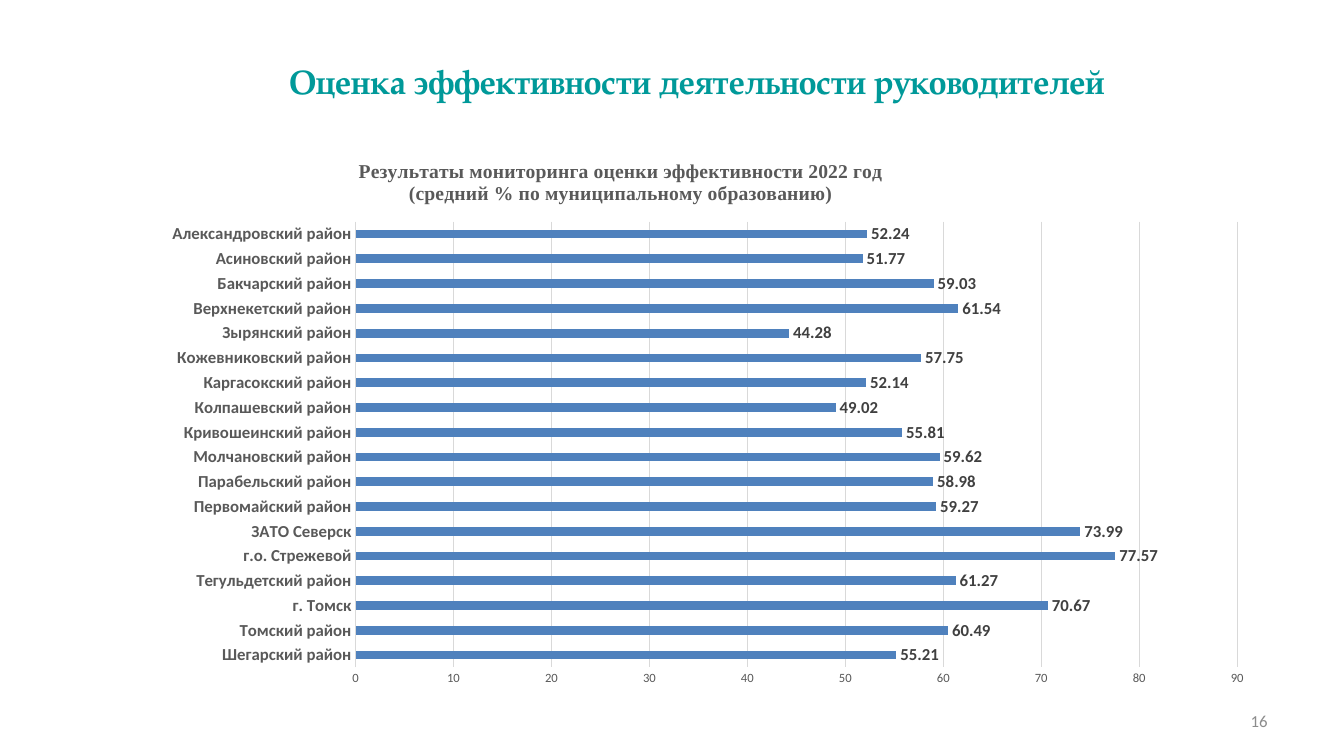
from pptx import Presentation
from pptx.chart.data import CategoryChartData
from pptx.dml.color import RGBColor
from pptx.enum.chart import XL_CHART_TYPE, XL_LABEL_POSITION, XL_TICK_MARK
from pptx.enum.text import MSO_ANCHOR, PP_ALIGN
from pptx.oxml import parse_xml
from pptx.oxml.ns import nsdecls, qn
from pptx.util import Inches, Pt

TEAL = RGBColor(0x00, 0x99, 0x99)
BLUE = RGBColor(0x4F, 0x81, 0xBD)
BLACK = RGBColor(0x00, 0x00, 0x00)
DARK = RGBColor(0x40, 0x40, 0x40)
GRAY = RGBColor(0x59, 0x59, 0x59)
PALE = RGBColor(0xD9, 0xD9, 0xD9)
SOFT = RGBColor(0x8C, 0x8C, 0x8C)

HEAD = "Оценка эффективности деятельности руководителей"
CAPTION = ("Результаты мониторинга оценки эффективности 2022 год",
           "(средний % по муниципальному образованию)")
SCORES = {
    "Шегарский район": 55.21,
    "Томский район": 60.49,
    "г. Томск": 70.67,
    "Тегульдетский район": 61.27,
    "г.о. Стрежевой": 77.57,
    "ЗАТО Северск": 73.99,
    "Первомайский район": 59.27,
    "Парабельский район": 58.98,
    "Молчановский район": 59.62,
    "Кривошеинский район": 55.81,
    "Колпашевский район": 49.02,
    "Каргасокский район": 52.14,
    "Кожевниковский район": 57.75,
    "Зырянский район": 44.28,
    "Верхнекетский район": 61.54,
    "Бакчарский район": 59.03,
    "Асиновский район": 51.77,
    "Александровский район": 52.24,
}


def set_font(font, name, size, color, bold=False):
    font.name = name
    font.size = Pt(size)
    font.color.rgb = color
    font.bold = bold


def add_text(slide, box, text, style, align=PP_ALIGN.LEFT):
    frame = slide.shapes.add_textbox(*map(Inches, box)).text_frame
    frame.word_wrap = True
    frame.vertical_anchor = MSO_ANCHOR.MIDDLE
    frame.text = text
    para = frame.paragraphs[0]
    para.alignment = align
    set_font(para.runs[0].font, *style)


def set_layout(parent, index, target="", **parts):
    """Place a chart part by fractions of the chart's size."""
    for old in parent.findall(qn("c:layout")):
        parent.remove(old)
    modes = "".join(f'<c:{key}Mode val="edge"/>' for key in "xy")
    sizes = "".join(f'<c:{key} val="{val}"/>' for key, val in parts.items())
    parent.insert(index, parse_xml(
        f'<c:layout {nsdecls("c")}><c:manualLayout>{target}{modes}{sizes}'
        '</c:manualLayout></c:layout>'))


def set_title(chart):
    frame = chart.chart_title.text_frame
    frame.text = "\n".join(CAPTION)
    for para in frame.paragraphs:
        para.alignment = PP_ALIGN.CENTER
        set_font(para.runs[0].font, "Times New Roman", 14, GRAY, True)
    chart.chart_title.include_in_layout = False
    set_layout(chart.chart_title._element, 1, x=0.19, y=0.01)


def set_axes(chart):
    names, values = chart.category_axis, chart.value_axis
    for axis in (names, values):
        axis.major_tick_mark = axis.minor_tick_mark = XL_TICK_MARK.NONE
    set_font(names.tick_labels.font, "Calibri", 12, GRAY, True)
    set_font(values.tick_labels.font, "Calibri", 9, GRAY)
    values.minimum_scale, values.maximum_scale = 0, 90
    values.major_unit = 10
    values.tick_labels.number_format = "General"
    values.tick_labels.number_format_is_linked = False
    values.format.line.fill.background()
    values.has_major_gridlines = True
    for line in (names.format.line, values.major_gridlines.format.line):
        line.color.rgb = PALE
        line.width = Pt(0.75)


def set_bars(plot):
    plot.gap_width = 182
    plot.vary_by_categories = False
    fill = plot.series[0].format.fill
    fill.solid()
    fill.fore_color.rgb = BLUE
    labels = plot.series[0].data_labels
    labels.show_value = True
    labels.position = XL_LABEL_POSITION.OUTSIDE_END
    set_font(labels.font, "Calibri", 12, DARK, True)


def add_scores(slide, box):
    data = CategoryChartData()
    data.categories = list(SCORES)
    data.add_series("Series 1", list(SCORES.values()))
    chart = slide.shapes.add_chart(
        XL_CHART_TYPE.BAR_CLUSTERED, *map(Inches, box), data).chart
    set_font(chart.font, "Calibri", 10, BLACK)
    chart.has_legend = False
    set_title(chart)
    set_axes(chart)
    set_bars(chart.plots[0])
    area = chart._chartSpace.chart.plotArea
    set_layout(area, 0, '<c:layoutTarget val="inner"/>',
               x=0.19, y=0.13, w=0.8, h=0.81)


def main():
    deck = Presentation()
    deck.slide_width, deck.slide_height = Inches(13.33), Inches(7.5)
    slide = deck.slides.add_slide(deck.slide_layouts[6])
    add_text(slide, (9.56, 6.95, 3.11, 0.4), "16",
             ("Calibri", 12, SOFT), PP_ALIGN.RIGHT)
    add_scores(slide, (1.45, 1.49, 10.93, 5.46))
    add_text(slide, (2.77, 0.55, 9.11, 0.5), HEAD,
             ("TeX Gyre Pagella", 24, TEAL, True))
    deck.save("out.pptx")


if __name__ == "__main__":
    main()
